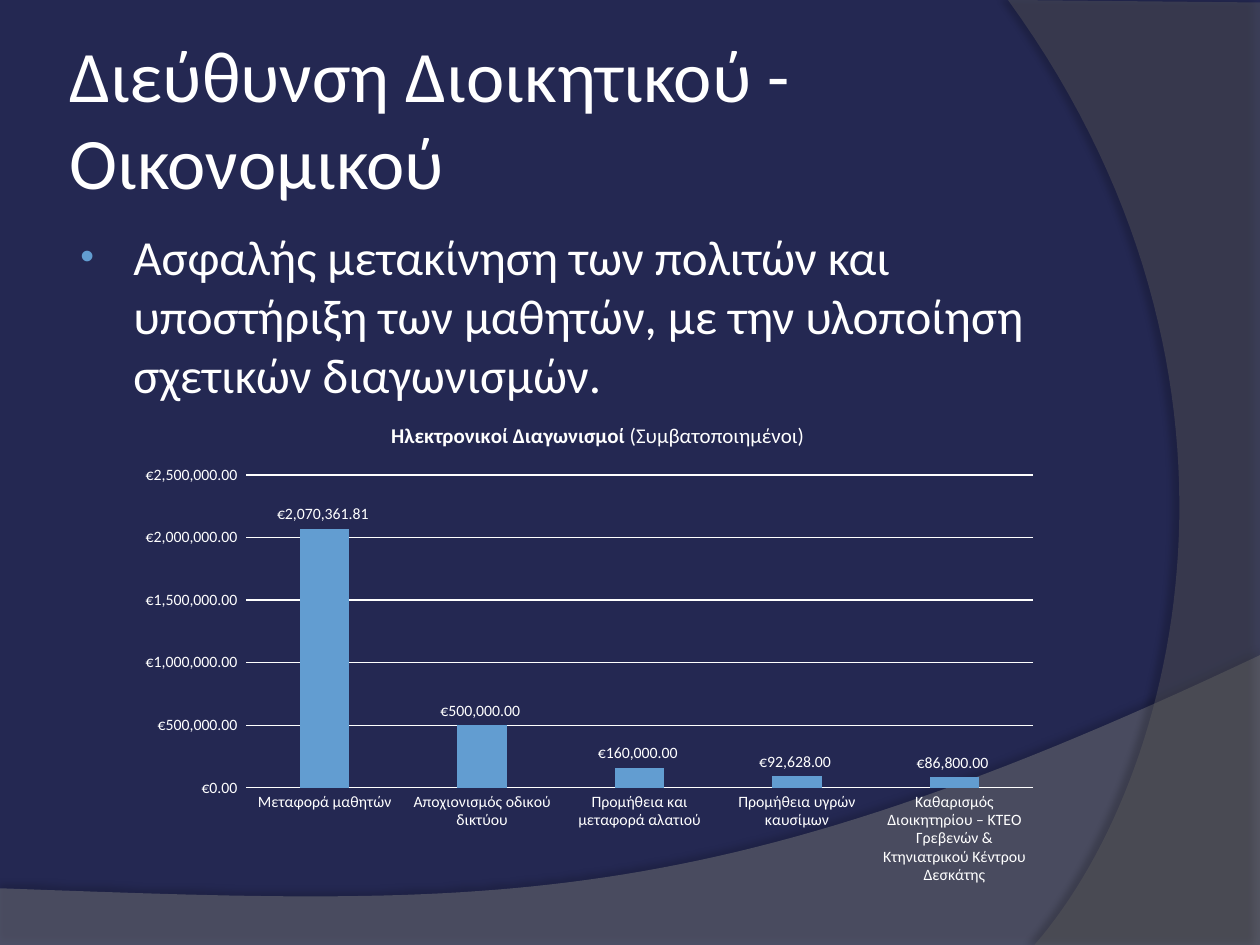
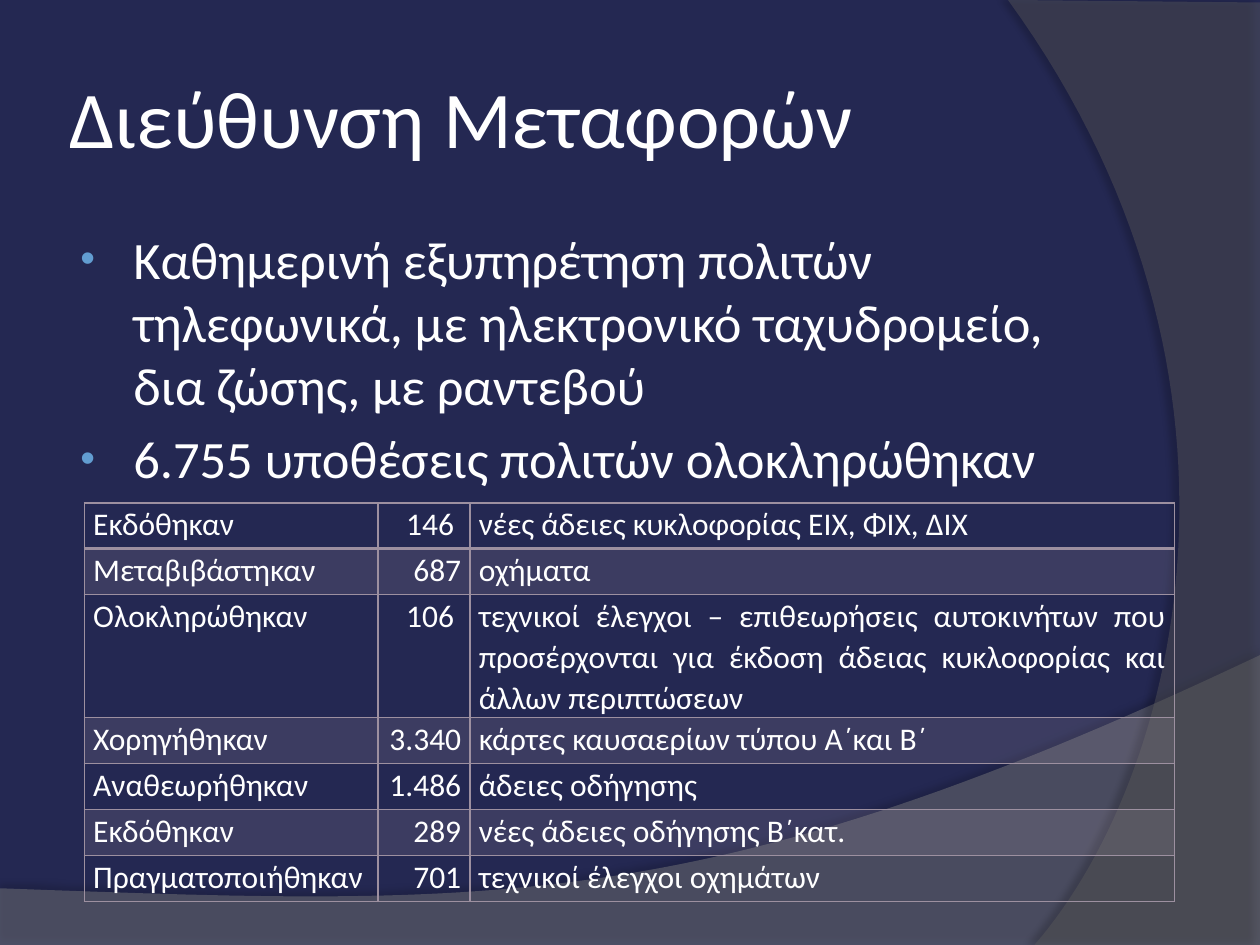
from dataclasses import dataclass
from lxml.etree import SubElement
from pptx import Presentation
from pptx.chart.data import CategoryChartData
from pptx.dml.color import RGBColor
from pptx.enum.chart import XL_CHART_TYPE, XL_LABEL_POSITION, XL_TICK_MARK
from pptx.enum.text import MSO_ANCHOR, PP_ALIGN
from pptx.oxml import parse_xml
from pptx.oxml.ns import nsdecls, qn
from pptx.util import Inches, Pt


@dataclass(frozen=True)
class Theme:
    font: str = "Calibri"
    back: str = "242852"
    ink: str = "FFFFFF"
    accent: str = "629DD1"
    rule: str = "9D90A0"
    wave: str = "7F7F7F"
    arc: str = "5E5E5E"
    cell: float = 18
    head: float = 12
    label: float = 9


T = Theme()
WIDE, HIGH = Inches(10), Inches(7.5)

# All places and sizes are percent of the slide's width and height.
TITLE = (5, 4, 81.7, 16.67)
BODY = (5, 23.33, 81.7, 66)
CHART = (10.7, 42.4, 73.5, 52.53)
TABLE = (6.7, 53.2, 86.5, 42)
COLS = (23.3, 7.3, 55.9)
ROW, TALL = 4.87, 13
PLOT = {"x": 0.12, "y": 0.15, "w": 0.85, "h": 0.63}

# Each band: colour, opacity, corner points, curve controls and end, shadow.
BANDS = [
    dict(color=T.wave, alpha=45, line=[(0, 94), (0, 100), (100, 100), (100, 69.33)],
         curve=[(55.9, 97.2), (39.1, 95.87), (0, 94)], shade=(35, 3.5, 270)),
    dict(color=T.arc, alpha=40, line=[(100, 0.27), (100, 100), (82.1, 100)],
         curve=[(93.5, 82.53), (101.8, 40), (80, 0)], shade=(45, 4, 180)),
]

ADMIN = dict(
    title="Διεύθυνση Διοικητικού - Οικονομικού", size=41.4, text=28,
    points=["Ασφαλής μετακίνηση των πολιτών και υποστήριξη των μαθητών, "
            "με την υλοποίηση σχετικών διαγωνισμών."])
MOVES = dict(
    title="Διεύθυνση Μεταφορών", size=46, text=30,
    points=["Καθημερινή εξυπηρέτηση πολιτών τηλεφωνικά, με ηλεκτρονικό "
            "ταχυδρομείο, δια ζώσης, με ραντεβού",
            "6.755 υποθέσεις πολιτών ολοκληρώθηκαν"])

HEAD = [("Ηλεκτρονικοί Διαγωνισμοί", True), (" (Συμβατοποιημένοι)", False)]
EURO = '"€"#,##0.00_);[Red]\\("€"#,##0.00\\)'
TENDERS = {
    "Μεταφορά μαθητών": 2070361.81,
    "Αποχιονισμός οδικού δικτύου": 500000,
    "Προμήθεια και μεταφορά αλατιού": 160000,
    "Προμήθεια υγρών καυσίμων": 92628,
    "Καθαρισμός Διοικητηρίου – ΚΤΕΟ Γρεβενών & Κτηνιατρικού Κέντρου Δεσκάτης": 86800,
}
CASES = [
    ("Εκδόθηκαν", "146 ", "νέες άδειες κυκλοφορίας ΕΙΧ, ΦΙΧ, ΔΙΧ"),
    ("Μεταβιβάστηκαν", "687", "οχήματα"),
    ("Ολοκληρώθηκαν", "106 ", "τεχνικοί έλεγχοι – επιθεωρήσεις αυτοκινήτων που "
     "προσέρχονται για έκδοση άδειας κυκλοφορίας και άλλων περιπτώσεων"),
    ("Χορηγήθηκαν", "3.340", "κάρτες καυσαερίων τύπου Α΄και Β΄"),
    ("Αναθεωρήθηκαν", "1.486", "άδειες οδήγησης"),
    ("Εκδόθηκαν", "289", "νέες άδειες οδήγησης Β΄κατ."),
    ("Πραγματοποιήθηκαν", "701", "τεχνικοί έλεγχοι οχημάτων"),
]
LONG = 2


def across(share):
    return int(WIDE * share / 100)


def down(share):
    return int(HIGH * share / 100)


def place(box):
    x, y, w, h = box
    return across(x), down(y), across(w), down(h)


def style(font, size, bold=False):
    font.name, font.size, font.bold = T.font, Pt(size), bold
    font.color.rgb = RGBColor.from_string(T.ink)


def paint(fill, color):
    fill.solid()
    fill.fore_color.rgb = RGBColor.from_string(color)


def fade(node, alpha):
    """Make the solid fill inside node partly clear."""
    color = node.find(qn("a:solidFill")).find(qn("a:srgbClr"))
    SubElement(color, qn("a:alpha")).set("val", str(alpha * 1000))


def bend(start, curve, steps=60):
    """Points along a cubic curve, after its start."""
    knots = [start, *curve]
    for step in range(1, steps + 1):
        t = step / steps
        parts = ((1 - t) ** 3, 3 * t * (1 - t) ** 2, 3 * t * t * (1 - t), t ** 3)
        yield tuple(sum(p * k[axis] for p, k in zip(parts, knots)) for axis in (0, 1))


def add_band(slide, color, alpha, line, curve, shade):
    dots = [(across(x), down(y)) for x, y in [*line, *bend(line[-1], curve)]]
    pen = slide.shapes.build_freeform(*dots[0])
    pen.add_line_segments(dots[1:], close=True)
    band = pen.convert_to_shape()
    paint(band.fill, color)
    band.line.fill.background()
    props = band.fill._xPr
    fade(props, alpha)
    dark, gap, turn = shade
    props.append(parse_xml(
        f'<a:effectLst {nsdecls("a")}><a:outerShdw blurRad="{Pt(4)}" dist="{Pt(gap)}" '
        f'dir="{turn * 60000}" algn="ctr" rotWithShape="0"><a:srgbClr val="000000">'
        f'<a:alpha val="{dark * 1000}"/></a:srgbClr></a:outerShdw></a:effectLst>'))


def add_text(slide, box, lines, size):
    frame = slide.shapes.add_textbox(*place(box)).text_frame
    frame.word_wrap = True
    frame.text = "\n".join(lines)
    for para in frame.paragraphs:
        style(para.runs[0].font, size)
    return frame


def add_dot(para, size):
    """Give a paragraph its bullet and hanging indent."""
    para.space_before = Pt(size * 0.2)
    props = para._p.get_or_add_pPr()
    props.set("marL", str(Inches(0.46)))
    props.set("indent", str(Inches(-0.42)))
    for mark in (f'<a:buClr {nsdecls("a")}><a:srgbClr val="{T.accent}"/></a:buClr>',
                 f'<a:buSzPct {nsdecls("a")} val="80000"/>',
                 f'<a:buFont {nsdecls("a")} typeface="Arial"/>',
                 f'<a:buChar {nsdecls("a")} char="•"/>'):
        props.append(parse_xml(mark))


def add_page(deck, title, size, text, points):
    slide = deck.slides.add_slide(deck.slide_layouts[6])
    paint(slide.background.fill, T.back)
    for band in BANDS:
        add_band(slide, **band)
    frame = add_text(slide, TITLE, [title], size)
    frame.vertical_anchor = MSO_ANCHOR.MIDDLE
    frame.margin_left = frame.margin_right = Inches(0.05)
    for para in add_text(slide, BODY, points, text).paragraphs:
        add_dot(para, text)
    return slide


def thin(line):
    line.width = Pt(0.75)
    paint(line.fill, T.ink)


def set_plot(chart):
    """Fix the inner plot area within the chart."""
    area = chart._chartSpace.find(qn("c:chart")).find(qn("c:plotArea"))
    for old in area.findall(qn("c:layout")):
        area.remove(old)
    modes = "".join(f'<c:{k}Mode val="edge"/>' for k in "xy")
    sizes = "".join(f'<c:{k} val="{v}"/>' for k, v in PLOT.items())
    area.insert(0, parse_xml(
        f'<c:layout {nsdecls("c")}><c:manualLayout><c:layoutTarget val="inner"/>'
        f'{modes}{sizes}</c:manualLayout></c:layout>'))


def add_bars(slide):
    data = CategoryChartData(number_format=EURO)
    data.categories = list(TENDERS)
    data.add_series("Series 1", list(TENDERS.values()))
    chart = slide.shapes.add_chart(
        XL_CHART_TYPE.COLUMN_CLUSTERED, *place(CHART), data).chart
    style(chart.font, 10)
    chart.has_legend = False
    chart.has_title = True
    para = chart.chart_title.text_frame.paragraphs[0]
    for words, bold in HEAD:
        run = para.add_run()
        run.text = words
        style(run.font, T.head, bold)
    chart.chart_title.include_in_layout = False

    plot = chart.plots[0]
    plot.gap_width, plot.overlap = 219, -27
    plot.vary_by_categories = False
    paint(plot.series[0].format.fill, T.accent)
    plot.has_data_labels = True
    tags = plot.data_labels
    tags.show_value = True
    tags.position = XL_LABEL_POSITION.OUTSIDE_END

    cats, vals = chart.category_axis, chart.value_axis
    for axis in (cats, vals):
        axis.major_tick_mark = axis.minor_tick_mark = XL_TICK_MARK.NONE
        style(axis.tick_labels.font, T.label)
    style(tags.font, T.label)
    for part in (tags, vals.tick_labels):
        part.number_format, part.number_format_is_linked = EURO, False
    thin(cats.format.line)
    thin(vals.major_gridlines.format.line)
    vals.format.line.fill.background()
    vals.minimum_scale, vals.maximum_scale, vals.major_unit = 0, 2500000, 500000
    set_plot(chart)


def edge(cell, widths):
    props = cell._tc.get_or_add_tcPr()
    for at, (side, width) in enumerate(widths.items()):
        props.insert(at, parse_xml(
            f'<a:ln{side} {nsdecls("a")} w="{Pt(width)}"><a:solidFill>'
            f'<a:srgbClr val="{T.rule}"/></a:solidFill></a:ln{side}>'))


def fill_cell(cell, words, row, col):
    cell.text = words
    cell.margin_left = cell.margin_right = Inches(0.07)
    cell.margin_top = cell.margin_bottom = 0
    para = cell.text_frame.paragraphs[0]
    para.alignment = PP_ALIGN.RIGHT if col == 1 else PP_ALIGN.JUSTIFY
    para.line_spacing = 1.07
    style(para.runs[0].font, T.cell)
    if row % 2:
        paint(cell.fill, T.rule)
        fade(cell._tc.get_or_add_tcPr(), 20)
    else:
        cell.fill.background()
    edge(cell, {"L": 1, "R": 1, "T": 2 if row == 1 else 1, "B": 2 if row == 0 else 1})


def add_cases(slide):
    grid = slide.shapes.add_table(len(CASES), len(COLS), *place(TABLE)).table
    grid.first_row = grid.horz_banding = False
    for col, share in zip(grid.columns, COLS):
        col.width = across(share)
    for row, case in enumerate(CASES):
        grid.rows[row].height = down(TALL if row == LONG else ROW)
        for col, words in enumerate(case):
            fill_cell(grid.cell(row, col), words, row, col)


def main():
    deck = Presentation()
    deck.slide_width, deck.slide_height = WIDE, HIGH
    add_bars(add_page(deck, **ADMIN))
    add_cases(add_page(deck, **MOVES))
    deck.save("out.pptx")


if __name__ == "__main__":
    main()
